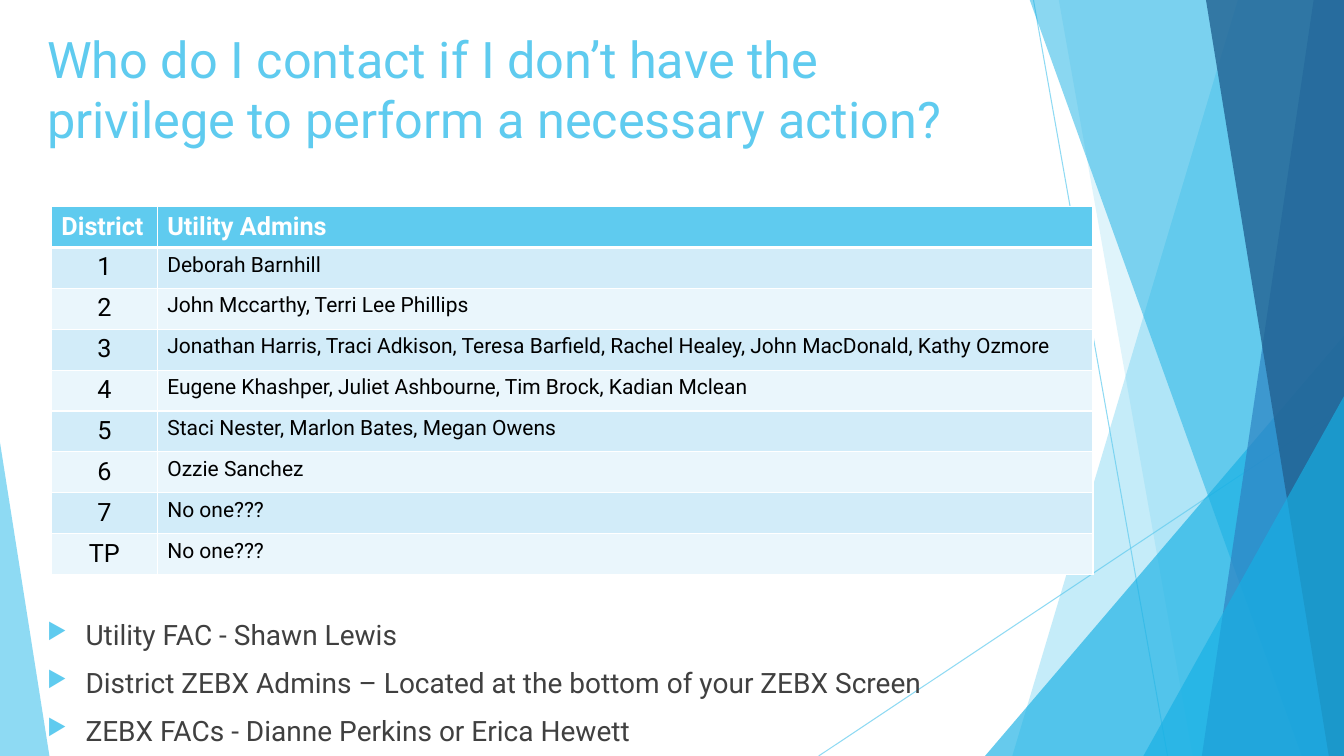
from dataclasses import dataclass

from lxml.etree import SubElement
from pptx import Presentation
from pptx.dml.color import RGBColor
from pptx.enum.shapes import MSO_CONNECTOR as Connector, MSO_SHAPE as Shape
from pptx.enum.text import MSO_ANCHOR as Anchor, PP_ALIGN as Align
from pptx.oxml.ns import qn
from pptx.util import Inches, Pt

WIDTH, HEIGHT = 13.33, 7.5
BLEED_TOP = -0.01
FONT = "Roboto"
SKY, CYAN, BLUE, NAVY = "5FCBEF", "17B0E4", "2E83C3", "226292"
WHITE, BLACK, GREY = "FFFFFF", "000000", "404040"
BANDS = ("D2ECF9", "EAF6FC")


@dataclass(frozen=True)
class Ray:
    start: tuple[float, float]
    end: tuple[float, float]


@dataclass(frozen=True)
class Panel:
    """A slanted left edge, filled out to the right side of the slide."""
    top_x: float
    bottom_x: float
    color: str
    opacity: int


@dataclass(frozen=True)
class Wedge:
    """A right triangle standing on the bottom of the slide."""
    left: float
    top: float
    width: float
    apex: float
    color: str
    opacity: int


RAYS = (Ray((10.25, 0), (11.58, HEIGHT)), Ray((WIDTH, 4.03), (8.12, HEIGHT)))
FACETS = (
    Panel(12.28, 10.04, SKY, 36),
    Panel(10.5, 11.83, SKY, 20),
    Wedge(9.77, 3.33, 3.56, 1, CYAN, 66),
    Panel(10.21, 12.91, CYAN, 50),
    Panel(13.03, 11.92, BLUE, 70),
    Panel(11.96, 13.18, NAVY, 80),
    Wedge(11.34, 3.93, 1.99, 1, CYAN, 66),
    Wedge(0, 4.39, 0.49, 0, SKY, 70),
)
TITLE = "Who do I contact if I don’t have the privilege to perform a necessary action?"
CONTACTS = (
    "Utility FAC - Shawn Lewis",
    "District ZEBX Admins – Located at the bottom of your ZEBX Screen",
    "ZEBX FACs - Dianne Perkins or Erica Hewett",
)
ADMINS = (
    ("District", "Utility Admins"),
    ("1", "Deborah Barnhill"),
    ("2", "John Mccarthy, Terri Lee Phillips"),
    ("3", "Jonathan Harris, Traci Adkison, Teresa Barfield, Rachel Healey, "
          "John MacDonald, Kathy Ozmore"),
    ("4", "Eugene Khashper, Juliet Ashbourne, Tim Brock, Kadian Mclean"),
    ("5", "Staci Nester, Marlon Bates, Megan Owens"),
    ("6", "Ozzie Sanchez"),
    ("7", "No one???"),
    ("TP", "No one???"),
)
COLUMN_WIDTHS = (1.05, 9.28)
TABLE_HEIGHT = 3.65


def paint(fill, color: str) -> None:
    fill.solid()
    fill.fore_color.rgb = RGBColor.from_string(color)


def fade(shape, opacity: int) -> None:
    for color in shape._element.spPr.iter(qn("a:srgbClr")):
        SubElement(color, qn("a:alpha"), val=str(opacity * 1000))


def write(paragraph, text: str, size: float, color: str, bold: bool = False) -> None:
    run = paragraph.add_run()
    run.text = text
    for name, value in {"name": FONT, "size": Pt(size), "bold": bold}.items():
        setattr(run.font, name, value)
    paint(run.font.fill, color)


def draw_ray(slide, ray: Ray) -> None:
    ends = [Inches(value) for value in (*ray.start, *ray.end)]
    connector = slide.shapes.add_connector(Connector.STRAIGHT, *ends)
    connector.line.width = Pt(0.75)
    paint(connector.line.fill, SKY)
    fade(connector, 70)
    SubElement(connector._element.spPr, qn("a:effectLst"))


def add_panel(slide, panel: Panel):
    corners = [(Inches(x), Inches(y)) for x, y in (
        (panel.top_x, BLEED_TOP), (WIDTH, BLEED_TOP),
        (WIDTH, HEIGHT), (panel.bottom_x, HEIGHT))]
    builder = slide.shapes.build_freeform(*corners[0], scale=1.0)
    builder.add_line_segments(corners[1:], close=True)
    return builder.convert_to_shape()


def add_wedge(slide, wedge: Wedge):
    box = (wedge.left, wedge.top, wedge.width, HEIGHT - wedge.top)
    shape = slide.shapes.add_shape(Shape.ISOSCELES_TRIANGLE, *map(Inches, box))
    shape.adjustments[0] = wedge.apex
    return shape


def draw_facet(slide, facet: Panel | Wedge) -> None:
    add = add_panel if isinstance(facet, Panel) else add_wedge
    shape = add(slide, facet)
    shape.shadow.inherit = False
    shape.line.fill.background()
    paint(shape.fill, facet.color)
    fade(shape, facet.opacity)


def add_text_frame(slide, left: float, top: float, width: float, height: float):
    frame = slide.shapes.add_textbox(*map(Inches, (left, top, width, height))).text_frame
    frame.word_wrap = True
    frame.vertical_anchor = Anchor.TOP
    return frame


def add_bullet(paragraph) -> None:
    paragraph.space_before = Pt(10)
    properties = paragraph._p.get_or_add_pPr()
    properties.set("marL", str(Inches(0.38)))
    properties.set("indent", str(Inches(-0.38)))
    color = SubElement(properties, qn("a:buClr"))
    SubElement(color, qn("a:srgbClr"), val=SKY)
    SubElement(properties, qn("a:buSzPct"), val="80000")
    SubElement(properties, qn("a:buChar"), char="▶")


def draw_contacts(slide) -> None:
    frame = add_text_frame(slide, 0.37, 6.08, 12.14, 1.42)
    for index, contact in enumerate(CONTACTS):
        paragraph = frame.add_paragraph() if index else frame.paragraphs[0]
        add_bullet(paragraph)
        write(paragraph, contact, 20, GREY)


def set_borders(cell, widths: dict[str, float]) -> None:
    properties = cell._tc.get_or_add_tcPr()
    for index, (side, width) in enumerate(widths.items()):
        line = properties.makeelement(qn(f"a:ln{side}"), {"w": str(Pt(width))})
        SubElement(SubElement(line, qn("a:solidFill")), qn("a:srgbClr"), val=WHITE)
        properties.insert(index, line)


def draw_admin_table(slide) -> None:
    box = (0.51, 2.05, sum(COLUMN_WIDTHS), TABLE_HEIGHT)
    table = slide.shapes.add_table(
        len(ADMINS), len(COLUMN_WIDTHS), *map(Inches, box)).table
    for column, width in zip(table.columns, COLUMN_WIDTHS):
        column.width = Inches(width)
    for row, texts in enumerate(ADMINS):
        header = row == 0
        for column, text in enumerate(texts):
            cell = table.cell(row, column)
            paint(cell.fill, SKY if header else BANDS[(row - 1) % 2])
            set_borders(cell, {"L": 1, "R": 1, "T": 3 if row == 1 else 1,
                               "B": 3 if header else 1})
            paragraph = cell.text_frame.paragraphs[0]
            if column == 0 and not header:
                paragraph.alignment = Align.CENTER
            size = 18 if header or column == 0 else 15
            write(paragraph, text, size, WHITE if header else BLACK, header)


def main() -> None:
    presentation = Presentation()
    presentation.slide_width = Inches(WIDTH)
    presentation.slide_height = Inches(HEIGHT)
    slide = presentation.slides.add_slide(presentation.slide_layouts[6])
    for ray in RAYS:
        draw_ray(slide, ray)
    for facet in FACETS:
        draw_facet(slide, facet)
    title = add_text_frame(slide, 0.37, 0.23, 9.4, 1.44)
    write(title.paragraphs[0], TITLE, 36, SKY)
    draw_contacts(slide)
    draw_admin_table(slide)
    presentation.save("out.pptx")


if __name__ == "__main__":
    main()
